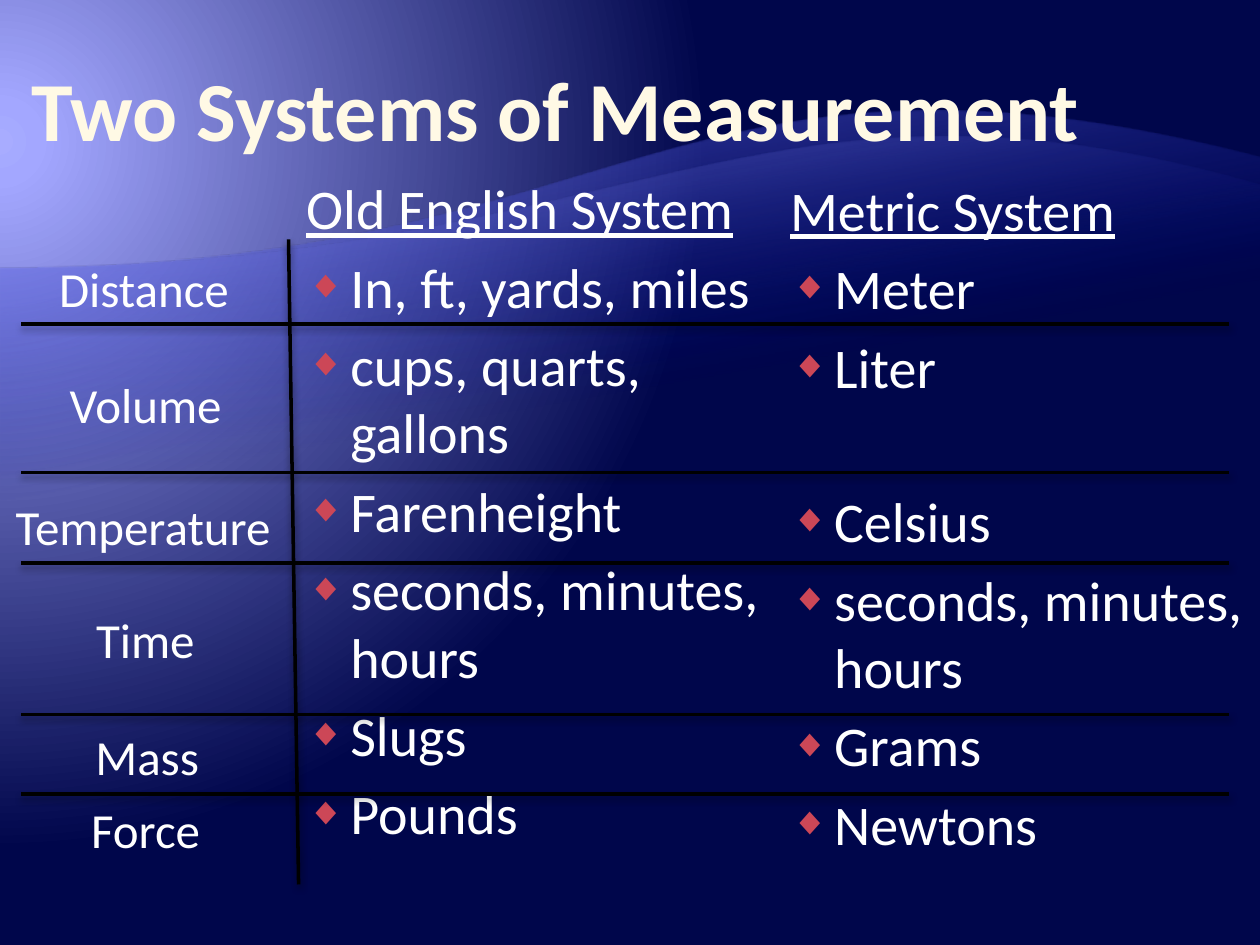
from lxml import etree
from pptx import Presentation
from pptx.dml.color import RGBColor
from pptx.enum.shapes import MSO_CONNECTOR
from pptx.enum.text import MSO_ANCHOR, MSO_AUTO_SIZE as AutoSize, PP_ALIGN
from pptx.oxml import parse_xml
from pptx.oxml.ns import nsdecls, qn
from pptx.util import Inches, Pt

# Content
TITLE = "Two Systems of Measurement"
# heading, (left, top, width, height), items
SYSTEMS = [
    ("Old English System", (2.33, 1.33, 4, 4.55),
     ["In, ft, yards, miles", "cups, quarts, gallons", "Farenheight",
      "seconds, minutes, hours", "Slugs", "Pounds"]),
    ("Metric System", (6.17, 1.34, 4.25, 4.95),
     ["Meter", "Liter", "Celsius", "seconds, minutes, hours", "Grams", "Newtons"]),
]
EXTRA_SPACE = {"Celsius": 50}  # points above, to line up with its row
# quantity, top, width
QUANTITIES = [("Distance", 2, 1.62), ("Volume", 2.92, 1.45),
              ("Temperature", 3.89, 2.31), ("Time", 4.79, 1.03),
              ("Mass", 5.72, 1.04), ("Force", 6.3, 1.11)]
QUANTITY_CENTRE = 1.18
ROW_LINES = [2.57, 3.75, 4.47, 5.67, 6.3]
ROW_LEFT, ROW_RIGHT = 0.17, 9.75
COLUMN_LINE = (2.29, 1.9, 2.37, 7.02)
# right-hand top, bottom, two curve controls, gradient colour, opacity
WAVES = [(1.25, 7.33, [(5, 2.13), (5.34, 0.05)], "wave", 55),
         (1.47, 6.37, [(5, 2.13), (5.98, 0.31)], "glow", 30)]
WAVE_LEFT_TOP = 2.13
COLORS = {"title": "FFF9E5", "text": "FFFFFF", "bullet": "CC4757", "line": "000000",
          "light": "A8ACFF", "glow": "A3A7FF", "night": "00064B",
          "deep": "000D9E", "wave": "797FFF"}
FONT = "Calibri"


def gradient(stops, direction):
    """Gradient fill from (position %, colour name, opacity %) stops."""
    marks = "".join(
        f'<a:gs pos="{pos * 1000}"><a:srgbClr val="{COLORS[name]}">'
        f'<a:alpha val="{opacity * 1000}"/></a:srgbClr></a:gs>'
        for pos, name, opacity in stops)
    return f'<a:gradFill {nsdecls("a")} rotWithShape="1"><a:gsLst>{marks}</a:gsLst>{direction}</a:gradFill>'


def add_run(para, text, size, color, **style):
    run = para.add_run()
    run.text = text
    run.font.name, run.font.size = FONT, Pt(size)
    run.font.color.rgb = RGBColor.from_string(COLORS[color])
    for name, value in style.items():
        setattr(run.font, name, value)


def place(shape, left, top, width, height):
    shape.left, shape.top = Inches(left), Inches(top)
    shape.width, shape.height = Inches(width), Inches(height)


def set_bullet(para, bulleted):
    props = para._p.get_or_add_pPr()
    props.set("marL", str(Inches(0.35)))
    props.set("indent", str(-Inches(0.35)))
    if not bulleted:
        etree.SubElement(props, qn("a:buNone"))
        return
    color = etree.SubElement(props, qn("a:buClr"))
    etree.SubElement(color, qn("a:srgbClr"), val=COLORS["bullet"])
    etree.SubElement(props, qn("a:buSzPct"), val="70000")
    etree.SubElement(props, qn("a:buChar"), char="◆")


def add_wave(page, top, bottom, controls, color, opacity):
    corners = [(0, bottom), (0, WAVE_LEFT_TOP), (10, top)]
    builder = page.shapes.build_freeform(Inches(10), Inches(bottom))
    builder.add_line_segments([(Inches(x), Inches(y)) for x, y in corners])
    wave = builder.convert_to_shape()
    wave.shadow.inherit = False
    wave.line.fill.background()
    # The upper edge becomes a curve
    edge = wave._element.findall(".//" + qn("a:lnTo"))[2]
    edge.tag = qn("a:cubicBezTo")
    curve = etree.Element(qn("a:cubicBezTo"))
    for x, y in controls + [(10, top)]:
        etree.SubElement(curve, qn("a:pt"), x=str(Inches(x)), y=str(Inches(y) - Inches(top)))
    edge.getparent().replace(edge, curve)
    fill = gradient([(65, "deep", 0), (100, color, opacity)],
                    f'<a:lin ang="{260 * 60000}" scaled="0"/>')
    wave._element.spPr.find(qn("a:custGeom")).addnext(parse_xml(fill))


def add_line(page, x1, y1, x2, y2):
    line = page.shapes.add_connector(
        MSO_CONNECTOR.STRAIGHT, Inches(x1), Inches(y1), Inches(x2), Inches(y2))
    line.line.color.rgb = RGBColor.from_string(COLORS["line"])
    line.line.width = Pt(2)
    line._element.spPr.append(parse_xml(
        f'<a:effectLst {nsdecls("a")}><a:outerShdw blurRad="{Pt(4)}" dist="{Pt(2)}" '
        f'dir="5400000" rotWithShape="0"><a:srgbClr val="{COLORS["line"]}">'
        '<a:alpha val="43000"/></a:srgbClr></a:outerShdw></a:effectLst>'))


def main():
    deck = Presentation()
    deck.slide_width, deck.slide_height = Inches(10), Inches(7.5)
    page = deck.slides.add_slide(deck.slide_layouts[3])
    title, *bodies = page.placeholders

    # Background glow
    page.background.fill.solid()
    back = page._element.cSld.find(".//" + qn("p:bgPr"))
    back.replace(back[0], parse_xml(gradient(
        [(0, "light", 100), (5, "glow", 100), (90, "night", 100)],
        '<a:path path="circle"><a:fillToRect l="20000" t="30000" r="135000" b="100000"/></a:path>')))

    # Waves, moved behind the placeholders
    for wave in WAVES:
        add_wave(page, *wave)
    for holder in (title, *bodies):
        page.shapes._spTree.append(holder._element)

    # Title
    place(title, 0.25, 0.02, 9, 1.25)
    frame = title.text_frame
    frame.auto_size, frame.vertical_anchor = AutoSize.NONE, MSO_ANCHOR.BOTTOM
    frame.margin_left = frame.margin_right = 0
    frame.margin_top = frame.margin_bottom = Inches(0.01)
    frame.paragraphs[0].alignment = PP_ALIGN.LEFT
    add_run(frame.paragraphs[0], TITLE, 48, "title", bold=True)

    # Two lists of units
    for body, (heading, area, items) in zip(bodies, SYSTEMS):
        place(body, *area)
        frame = body.text_frame
        frame.auto_size = AutoSize.NONE
        set_bullet(frame.paragraphs[0], False)
        add_run(frame.paragraphs[0], heading, 32, "text", underline=True)
        for item in items:
            para = frame.add_paragraph()
            if item in EXTRA_SPACE:
                para.space_before = Pt(EXTRA_SPACE[item])
            set_bullet(para, True)
            add_run(para, item, 32, "text")

    # Row labels
    for name, top, width in QUANTITIES:
        box = page.shapes.add_textbox(0, 0, 0, 0)
        place(box, QUANTITY_CENTRE - width / 2, top, width, 0.57)
        box.text_frame.word_wrap = False
        box.text_frame.auto_size = AutoSize.SHAPE_TO_FIT_TEXT
        add_run(box.text_frame.paragraphs[0], name, 28, "text")

    # Ruling
    for y in ROW_LINES:
        add_line(page, ROW_LEFT, y, ROW_RIGHT, y)
    add_line(page, *COLUMN_LINE)

    deck.save("out.pptx")


if __name__ == "__main__":
    main()
